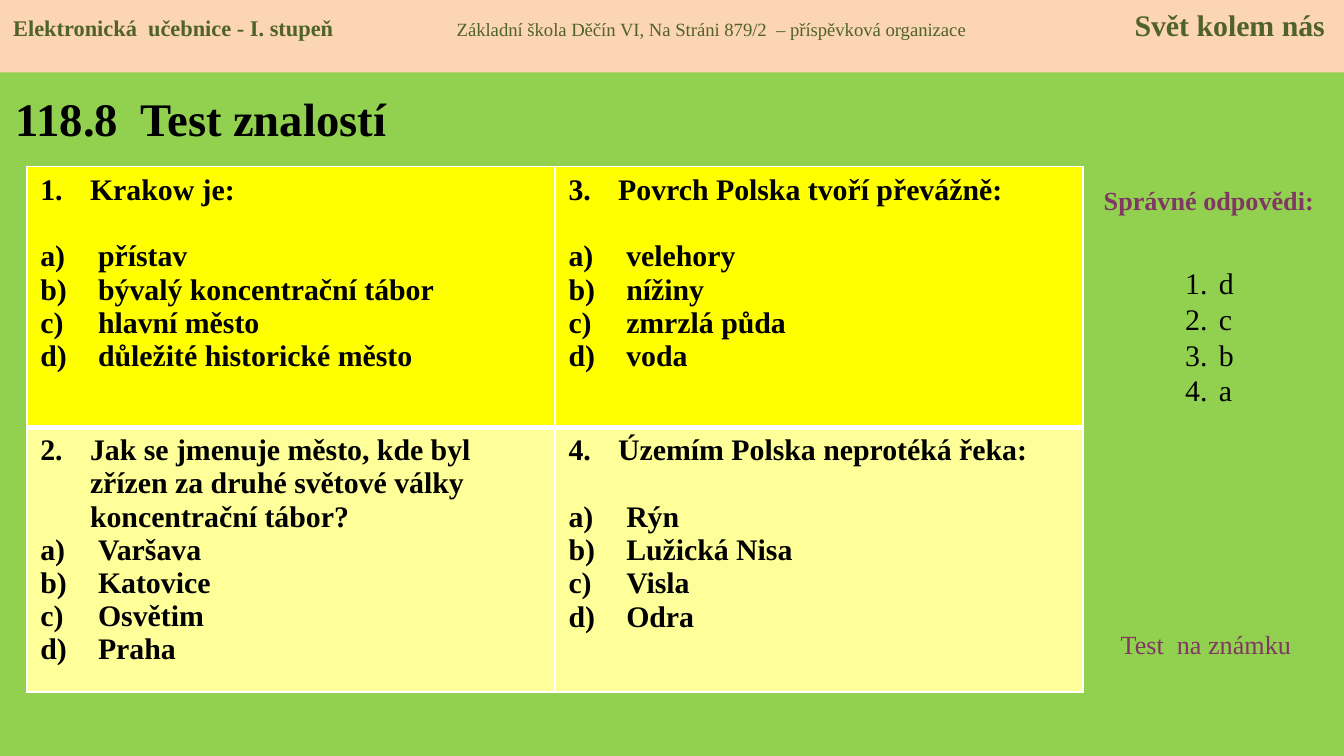
from lxml import etree
from pptx import Presentation
from pptx.dml.color import RGBColor
from pptx.enum.shapes import MSO_SHAPE
from pptx.enum.text import MSO_ANCHOR, PP_ALIGN
from pptx.oxml.ns import qn
from pptx.util import Inches, Pt

RECTANGLE = MSO_SHAPE.RECTANGLE
TOP, MIDDLE = MSO_ANCHOR.TOP, MSO_ANCHOR.MIDDLE
LEFT, CENTER = PP_ALIGN.LEFT, PP_ALIGN.CENTER
GREEN = RGBColor(0x92, 0xD0, 0x50)
PEACH = RGBColor(0xFC, 0xD5, 0xB5)
OLIVE = RGBColor(0x4F, 0x62, 0x28)
PURPLE = RGBColor(0x81, 0x37, 0x63)
YELLOW = RGBColor(0xFF, 0xFF, 0x00)
PALE_YELLOW = RGBColor(0xFF, 0xFF, 0x99)
WHITE = RGBColor(0xFF, 0xFF, 0xFF)
BLACK = RGBColor(0x00, 0x00, 0x00)

HEADER = [
    ("Elektronická  učebnice - I. stupeň", 12, True),
    ("\tZákladní škola Děčín VI, Na Stráni 879/2  – příspěvková organizace", 10, False),
    ("\tSvět kolem nás", 16, True),
]
HEADER_TABS = [(3.3, "l"), (9.76, "r")]
QUESTIONS = [
    [
        (1, "Krakow je:", 18,
         ["přístav", "bývalý koncentrační tábor", "hlavní město", "důležité historické město"]),
        (3, "Povrch Polska tvoří převážně:", 18,
         ["velehory", "nížiny", "zmrzlá půda", "voda"]),
    ],
    [
        (2, "Jak se jmenuje město, kde byl zřízen za druhé světové války koncentrační tábor?", 0,
         ["Varšava", "Katovice", "Osvětim", "Praha"]),
        (4, "Územím Polska neprotéká řeka:", 18,
         ["Rýn", "Lužická Nisa", "Visla", "Odra"]),
    ],
]
ROW_FILLS = [YELLOW, PALE_YELLOW]
ROW_HEIGHTS = [1.94, 1.97]
ROW_BORDERS = [(1, 3), (3, 1)]


class TestSlide:
    """Holds the text style and the current page of the quiz."""

    font_name = "Times New Roman"

    def __init__(self, page, background):
        self.page = page
        page.background.fill.solid()
        page.background.fill.fore_color.rgb = background

    def span(self, para, text, size, color=BLACK, bold=False):
        span = para.add_run()
        span.text = text
        style = {"name": self.font_name, "size": Pt(size), "bold": bold}
        for name, value in style.items():
            setattr(span.font, name, value)
        span.font.color.rgb = color

    def number(self, para, scheme, indent, start=1):
        props = para._p.get_or_add_pPr()
        props.set("marL", str(Inches(indent)))
        props.set("indent", str(-Inches(indent)))
        bullet = etree.SubElement(props, qn("a:buAutoNum"), type=scheme)
        if start > 1:
            bullet.set("startAt", str(start))

    def text(self, left, top, width, height, anchor=TOP):
        box = self.page.shapes.add_textbox(
            Inches(left), Inches(top), Inches(width), Inches(height))
        frame = box.text_frame
        style = {"word_wrap": True, "vertical_anchor": anchor}
        for name, value in style.items():
            setattr(frame, name, value)
        return frame

    def label(self, text, place, size, color=BLACK, bold=False, align=LEFT, anchor=TOP):
        para = self.text(*place, anchor).paragraphs[0]
        para.alignment = align
        self.span(para, text, size, color, bold)

    def answer_key(self, letters, place):
        frame = self.text(*place)
        for index, letter in enumerate(letters):
            para = frame.add_paragraph() if index else frame.paragraphs[0]
            self.number(para, "arabicPeriod", 0.25)
            self.span(para, letter, 16)

    def header(self, spans, tabs, height, fill):
        bar = self.page.shapes.add_shape(RECTANGLE, 0, 0, Inches(10), Inches(height))
        bar.shadow.inherit = False
        bar.fill.solid()
        bar.fill.fore_color.rgb = fill
        bar.line.fill.background()
        bar.text_frame.vertical_anchor = TOP
        para = bar.text_frame.paragraphs[0]
        para.alignment = LEFT
        tab_list = etree.SubElement(para._p.get_or_add_pPr(), qn("a:tabLst"))
        for position, align in tabs:
            etree.SubElement(tab_list, qn("a:tab"), pos=str(Inches(position)), algn=align)
        for text, size, bold in spans:
            self.span(para, text, size, OLIVE, bold)

    def borders(self, cell, top, bottom):
        props = cell._tc.get_or_add_tcPr()
        widths = {"a:lnL": 1, "a:lnR": 1, "a:lnT": top, "a:lnB": bottom}
        for index, (tag, width) in enumerate(widths.items()):
            line = etree.Element(qn(tag), w=str(Pt(width)))
            fill = etree.SubElement(line, qn("a:solidFill"))
            etree.SubElement(fill, qn("a:srgbClr"), val=str(WHITE))
            props.insert(index, line)

    def question(self, cell, number, text, gap, answers):
        para = cell.text_frame.paragraphs[0]
        self.number(para, "arabicPeriod", 0.37, number)
        self.span(para, text, 16, bold=True)
        for index, answer in enumerate(answers):
            para = cell.text_frame.add_paragraph()
            self.number(para, "alphaLcParenR", 0.43)
            if index == 0:
                para.space_before = Pt(gap)
            self.span(para, answer, 16, bold=True)

    def quiz(self, questions, left, top, width):
        columns = len(questions[0])
        table = self.page.shapes.add_table(
            len(questions), columns, Inches(left), Inches(top),
            Inches(width), Inches(sum(ROW_HEIGHTS))).table
        table.first_row = table.horz_banding = False
        for column in table.columns:
            column.width = Inches(width / columns)
        for row, height, fill, edges, entries in zip(
                table.rows, ROW_HEIGHTS, ROW_FILLS, ROW_BORDERS, questions):
            row.height = Inches(height)
            for cell, entry in zip(row.cells, entries):
                cell.fill.solid()
                cell.fill.fore_color.rgb = fill
                self.borders(cell, *edges)
                self.question(cell, *entry)


def main():
    deck = Presentation()
    deck.slide_width = Inches(10)
    deck.slide_height = deck.slide_width * 9 // 16
    slide = TestSlide(deck.slides.add_slide(deck.slide_layouts[6]), GREEN)
    slide.label("118.8  Test znalostí", (0.02, 0.55, 3.19, 0.65), 25, bold=True, anchor=MIDDLE)
    slide.label("Správné odpovědi:", (8.05, 1.32, 1.89, 0.34), 14, PURPLE, True, CENTER)
    slide.quiz(QUESTIONS, 0.2, 1.24, 7.86)
    slide.answer_key("dcba", (8.72, 1.92, 0.6, 1.72))
    slide.label("Test  na známku", (8.24, 4.63, 1.57, 0.34), 14, PURPLE)
    slide.header(HEADER, HEADER_TABS, 0.54, PEACH)
    deck.save("out.pptx")


if __name__ == "__main__":
    main()
